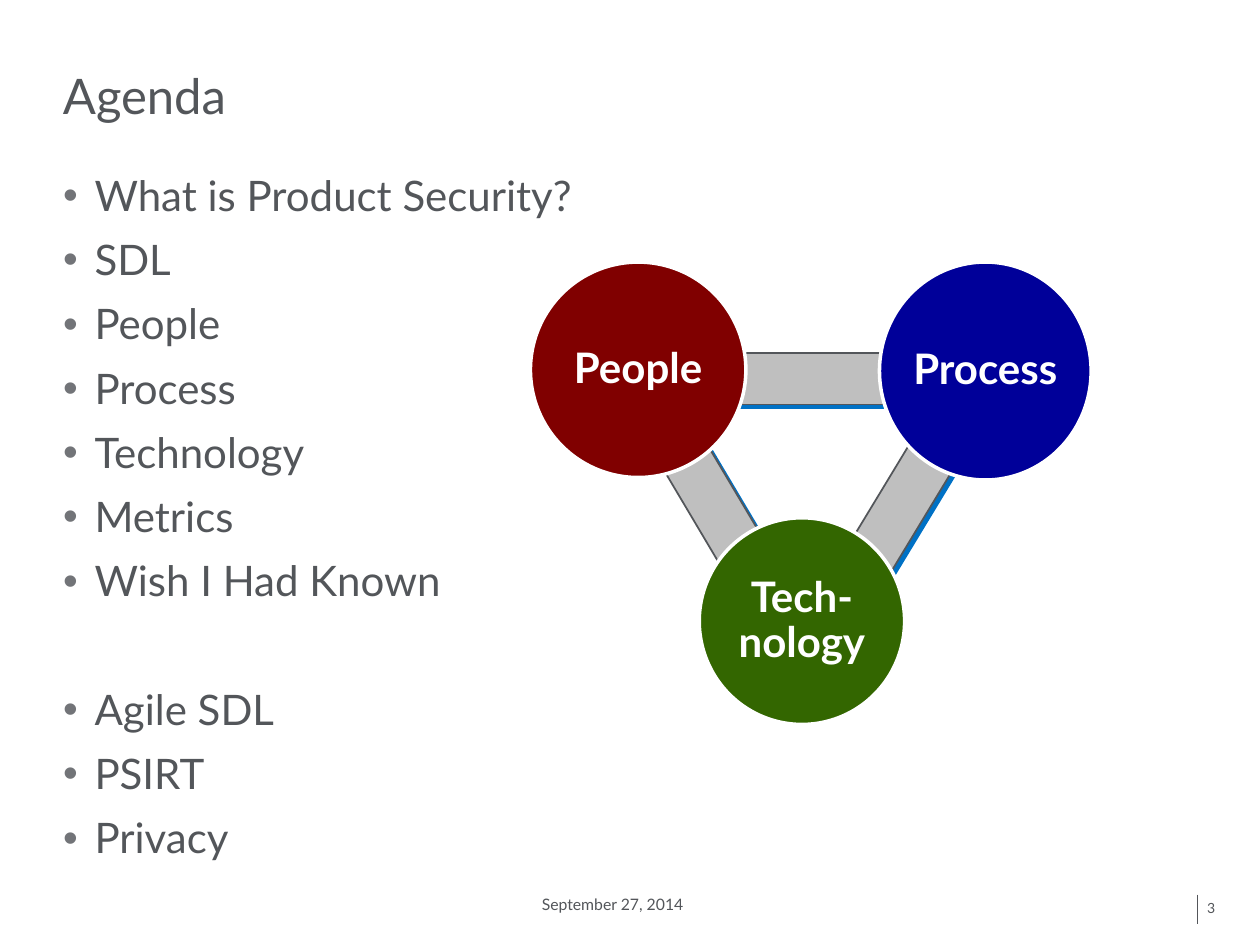
from lxml import etree
from pptx import Presentation
from pptx.dml.color import RGBColor
from pptx.enum.shapes import MSO_CONNECTOR as CONNECTOR, MSO_SHAPE as SHAPE
from pptx.enum.text import MSO_ANCHOR as ANCHOR, PP_ALIGN as ALIGN
from pptx.oxml.ns import qn
from pptx.util import Inches, Pt

GRAY = RGBColor(0x53, 0x56, 0x5A)
BULLET_GRAY = RGBColor(0x72, 0x74, 0x78)
BAR_GRAY = RGBColor(0xBF, 0xBF, 0xBF)
BLUE = RGBColor(0x00, 0x71, 0xC5)
RED = RGBColor(0x80, 0x00, 0x00)
GREEN = RGBColor(0x33, 0x66, 0x00)
NAVY = RGBColor(0x00, 0x00, 0x99)
WHITE = RGBColor(0xFF, 0xFF, 0xFF)

LINE_SPACING = 0.9
TOPICS = ["What is Product Security?", "SDL", "People", "Process", "Technology",
          "Metrics", "Wish I Had Known"]
EXTRA_TOPICS = ["Agile SDL", "PSIRT", "Privacy"]
BARS = [
    (1.47, 0.72, 1.41, 0.41, 0),
    (0.73, 1.72, 1.46, 0.4, 59.3),
    (2.21, 1.76, 1.46, 0.4, 121.2),
]
CIRCLES = [
    ("People", 0.01, 0, 1.71, 1.71, RED),
    ("Tech- nology", 1.35, 2.03, 1.63, 1.64, GREEN),
    ("Process", 2.78, 0, 1.68, 1.73, NAVY),
]


def set_margins(frame, size=0):
    frame.margin_left = frame.margin_right = Inches(size)
    frame.margin_top = frame.margin_bottom = Inches(size)


def style(paragraph, size, color=GRAY, bold=False):
    paragraph.font.name = "Lato"
    paragraph.font.size = Pt(size)
    paragraph.font.bold = bold
    paragraph.font.color.rgb = color


def add_label(slide, text, left, top, width, height, size, anchor):
    label = slide.shapes.add_textbox(Inches(left), Inches(top), Inches(width), Inches(height))
    frame = label.text_frame
    frame.word_wrap = True
    frame.vertical_anchor = anchor
    set_margins(frame)
    paragraph = frame.paragraphs[0]
    paragraph.text = text
    paragraph.line_spacing = LINE_SPACING
    style(paragraph, size)


def add_bullet(paragraph):
    properties = paragraph._p.get_or_add_pPr()
    properties.set("marL", str(Inches(0.25)))
    properties.set("indent", str(-Inches(0.25)))
    bullet_color = etree.SubElement(properties, qn("a:buClr"))
    etree.SubElement(bullet_color, qn("a:srgbClr"), val=str(BULLET_GRAY))
    etree.SubElement(properties, qn("a:buFont"), typeface="Arial")
    etree.SubElement(properties, qn("a:buChar"), char="•")


def add_topics(slide, left, top, width, height):
    agenda = slide.shapes.add_textbox(Inches(left), Inches(top), Inches(width), Inches(height))
    frame = agenda.text_frame
    frame.word_wrap = True
    set_margins(frame)
    for index, topic in enumerate(TOPICS + EXTRA_TOPICS):
        paragraph = frame.add_paragraph() if index else frame.paragraphs[0]
        paragraph.text = topic
        add_bullet(paragraph)
        paragraph.line_spacing = LINE_SPACING
        paragraph.space_after = Pt(6)
        if index:
            paragraph.space_before = Pt(41.5 if index == len(TOPICS) else 4.8)
        style(paragraph, 24)


def add_shadow(bar):
    effects = etree.SubElement(bar._element.spPr, qn("a:effectLst"))
    shadow = etree.SubElement(effects, qn("a:outerShdw"), dist=str(Pt(2.8)),
                              dir="2700000", algn="ctr", rotWithShape="0")
    etree.SubElement(shadow, qn("a:srgbClr"), val=str(BLUE))


def add_part(slide, kind, left, top, width, height, fill, line, weight):
    part = slide.shapes.add_shape(kind, Inches(left), Inches(top), Inches(width), Inches(height))
    part.fill.solid()
    part.fill.fore_color.rgb = fill
    part.line.color.rgb = line
    part.line.width = Pt(weight)
    return part


def add_triangle(slide, left, top):
    for x, y, width, height, angle in BARS:
        bar = add_part(slide, SHAPE.RECTANGLE, left + x, top + y, width, height,
                       BAR_GRAY, GRAY, 1)
        bar.rotation = angle
        add_shadow(bar)
    for name, x, y, width, height, color in CIRCLES:
        circle = add_part(slide, SHAPE.OVAL, left + x, top + y, width, height,
                          color, WHITE, 2)
        circle.shadow.inherit = False
        frame = circle.text_frame
        frame.word_wrap = True
        frame.vertical_anchor = ANCHOR.MIDDLE
        set_margins(frame)
        paragraph = frame.paragraphs[0]
        paragraph.text = name
        paragraph.alignment = ALIGN.CENTER
        paragraph.line_spacing = LINE_SPACING
        style(paragraph, 24, WHITE, True)


def add_footer(slide, top):
    divider = slide.shapes.add_connector(CONNECTOR.STRAIGHT, Inches(9.5), Inches(top),
                                         Inches(9.5), Inches(top + 0.23))
    divider.line.color.rgb = GRAY
    divider.line.width = Pt(0.5)
    etree.SubElement(divider._element.spPr, qn("a:effectLst"))
    add_label(slide, "3", 9.58, top, 0.25, 0.23, 8, ANCHOR.MIDDLE)
    add_label(slide, "September 27, 2014", 4.3, top + 0.02, 1.57, 0.15, 9, ANCHOR.TOP)


def main():
    deck = Presentation()
    deck.slide_width = Inches(10)
    deck.slide_height = Inches(7.5)
    slide = deck.slides.add_slide(deck.slide_layouts[6])
    add_label(slide, "Agenda", 0.5, 0.2, 9, 0.79, 28, ANCHOR.BOTTOM)
    add_topics(slide, 0.5, 1.39, 6.59, 5.1)
    add_triangle(slide, 4.2, 2.08)
    add_footer(slide, 7.1)
    deck.save("out.pptx")


if __name__ == "__main__":
    main()
